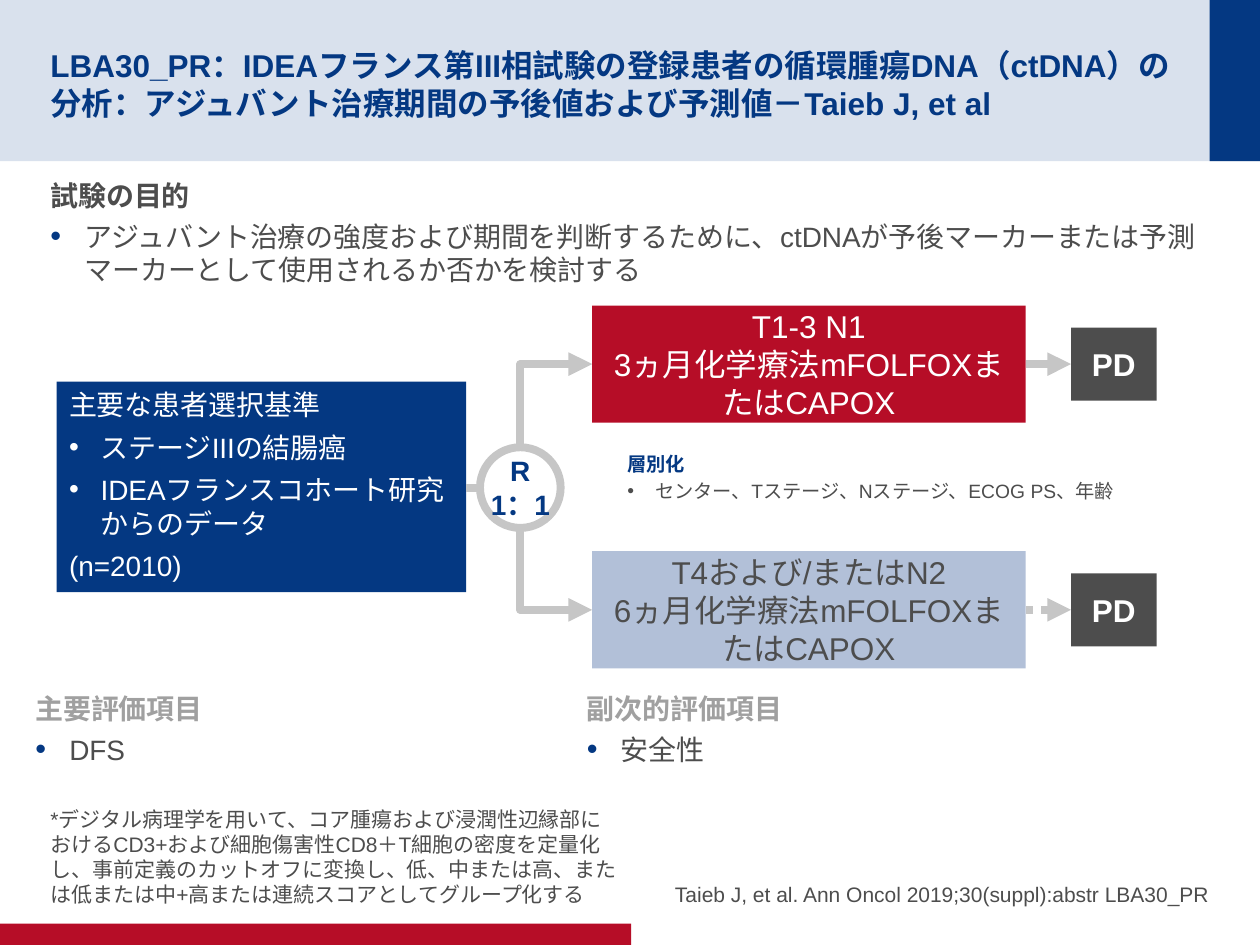
from dataclasses import dataclass

from lxml.etree import SubElement
from pptx import Presentation
from pptx.dml.color import RGBColor
from pptx.enum.dml import MSO_LINE_DASH_STYLE as Dash
from pptx.enum.shapes import MSO_CONNECTOR_TYPE as Link, MSO_SHAPE as Form
from pptx.enum.text import MSO_ANCHOR as Anchor, PP_ALIGN as Align
from pptx.oxml.ns import qn
from pptx.util import Inches, Pt

NAVY, RED, PALE, HEADER = "043882", "B60D27", "B2C0D8", "D9E1ED"
DARK, MID, LIGHT, WHITE = "4D4D4D", "A0A0A0", "C6C6C6", "FFFFFF"
FLAT = (0, 0.05, 0, 0.05)
BARE = (0, 0, 0, 0)
SIDES = (0.1, 0, 0.1, 0)
PADDED = (0.1, 0.05, 0.1, 0.05)


@dataclass(frozen=True)
class Area:
    left: float
    top: float
    width: float
    height: float

    def lengths(self) -> list:
        return [Inches(v) for v in (self.left, self.top, self.width, self.height)]


@dataclass(frozen=True)
class Line:
    text: str
    size: float = 16
    color: str = DARK
    bold: bool = False
    align: Align = Align.LEFT
    after: float = 0
    indent: float = 0
    bullet_color: str = NAVY
    bullet_size: int = 110


@dataclass(frozen=True)
class Arm:
    middle: float
    fill: str
    color: str
    text: str
    dash: Dash | None = None


def rgb(value: str) -> RGBColor:
    return RGBColor.from_string(value)


def add_bullet(para, line: Line) -> None:
    properties = para._p.get_or_add_pPr()
    properties.set("marL", str(Inches(line.indent)))
    properties.set("indent", str(-Inches(line.indent)))
    color = SubElement(properties, qn("a:buClr"))
    SubElement(color, qn("a:srgbClr"), val=line.bullet_color)
    SubElement(properties, qn("a:buSzPct"), val=str(line.bullet_size * 1000))
    SubElement(properties, qn("a:buFont"), typeface="Arial")
    SubElement(properties, qn("a:buChar"), char="•")


def write(box, lines: list[Line], insets=PADDED, anchor=Anchor.TOP, wrap=True) -> None:
    frame = box.text_frame
    frame.word_wrap = wrap
    frame.vertical_anchor = anchor
    (frame.margin_left, frame.margin_top,
     frame.margin_right, frame.margin_bottom) = [Inches(v) for v in insets]
    frame.text = "\n".join(line.text for line in lines)
    for para, line in zip(frame.paragraphs, lines):
        para.alignment = line.align
        para.space_after = Pt(line.after)
        if line.indent:
            add_bullet(para, line)
        for span in para.runs:
            span.font.name = "Arial"
            span.font.size = Pt(line.size)
            span.font.bold = line.bold
            span.font.color.rgb = rgb(line.color)


def add_text(page, area: Area, lines: list[Line], insets=PADDED, anchor=Anchor.TOP) -> None:
    write(page.shapes.add_textbox(*area.lengths()), lines, insets, anchor)


def add_block(page, area: Area, fill: str, form=Form.RECTANGLE):
    block = page.shapes.add_shape(form, *area.lengths())
    block.shadow.inherit = False
    block.fill.solid()
    block.fill.fore_color.rgb = rgb(fill)
    block.line.fill.background()
    return block


def add_link(page, start: tuple, end: tuple, kind=Link.STRAIGHT, arrow=True, dash=None):
    link = page.shapes.add_connector(kind, *[Inches(v) for v in (*start, *end)])
    link.line.color.rgb = rgb(LIGHT)
    link.line.width = Pt(4.5)
    if dash:
        link.line.dash_style = dash
    if arrow:
        SubElement(link.line._get_or_add_ln(), qn("a:tailEnd"), type="triangle")
    SubElement(link._element.spPr, qn("a:effectLst"))
    return link


def add_elbow(page, start: tuple, end: tuple) -> None:
    link = add_link(page, start, end, Link.ELBOW)
    across, down = end[0] - start[0], end[1] - start[1]
    width, height = abs(down), across
    area = Area((start[0] + end[0] - width) / 2, (start[1] + end[1] - height) / 2, width, height)
    link.left, link.top, link.width, link.height = area.lengths()
    properties = link._element.spPr
    properties.find(qn("a:prstGeom")).set("prst", "bentConnector2")
    frame = properties.find(qn("a:xfrm"))
    frame.set("rot", str((270 if down > 0 else 90) * 60000))
    frame.set("flipH", "1")
    frame.set("flipV", "0" if down > 0 else "1")


def add_arm(page, arm: Arm, hub: tuple) -> None:
    add_elbow(page, hub, (4.7, arm.middle))
    add_link(page, (8.14, arm.middle), (8.5, arm.middle), dash=arm.dash)
    treatment = add_block(page, Area(4.7, arm.middle - 0.465, 3.44, 0.93), arm.fill)
    write(treatment, [Line(arm.text, 18, arm.color, align=Align.CENTER)], SIDES, Anchor.MIDDLE)
    outcome = add_block(page, Area(8.5, arm.middle - 0.29, 0.68, 0.58), DARK)
    write(outcome, [Line("PD", 18, WHITE, True, Align.CENTER)], SIDES, Anchor.MIDDLE)


def add_section(page, area: Area, heading: str, item: str, color: str, insets=PADDED) -> None:
    add_text(page, area, [Line(heading, color=color, bold=True, after=4),
                          Line(item, after=4, indent=0.27)], insets)


def main() -> None:
    deck = Presentation()
    deck.slide_width, deck.slide_height = Inches(10), Inches(7.5)
    page = deck.slides.add_slide(deck.slide_layouts[6])

    add_block(page, Area(0, 0, 10, 1.28), HEADER)
    add_block(page, Area(9.6, 0, 0.4, 1.28), NAVY)
    add_block(page, Area(0, 7.33, 5.01, 0.17), RED)

    title = "LBA30_PR：IDEAフランス第III相試験の登録患者の循環腫瘍DNA（ctDNA）の分析：アジュバント治療期間の予後値および予測値－Taieb J, et al"
    add_text(page, Area(0.4, 0.2, 9.13, 0.88), [Line(title, 18, NAVY, True)],
             (0, 0.05, 0, 0), Anchor.MIDDLE)
    add_section(page, Area(0.4, 1.37, 9.2, 0.95), "試験の目的",
                "アジュバント治療の強度および期間を判断するために、ctDNAが予後マーカーまたは予測マーカーとして使用されるか否かを検討する",
                DARK, FLAT)
    add_section(page, Area(0.28, 5.44, 4.52, 0.85), "主要評価項目", "DFS", MID, FLAT)
    add_section(page, Area(4.56, 5.44, 4.92, 0.91), "副次的評価項目", "安全性", MID)

    footnote = "*デジタル病理学を用いて、コア腫瘍および浸潤性辺縁部におけるCD3+および細胞傷害性CD8＋T細胞の密度を定量化し、事前定義のカットオフに変換し、低、中または高、または低または中+高または連続スコアとしてグループ化する"
    citation = "Taieb J, et al. Ann Oncol 2019;30(suppl):abstr LBA30_PR"
    for left, text, align in ((0.4, footnote, Align.LEFT), (5.08, citation, Align.RIGHT)):
        add_text(page, Area(left, 6.67, 4.52, 0.53), [Line(text, 12, align=align, after=4)],
                 BARE, Anchor.BOTTOM)

    criteria = add_block(page, Area(0.45, 3.03, 3.25, 1.67), NAVY, Form.ROUNDED_RECTANGLE)
    criteria.adjustments[0] = 0
    bullet = dict(indent=0.25, bullet_color=WHITE, bullet_size=100)
    write(criteria, [
        Line("主要な患者選択基準", color=WHITE, after=5),
        Line("ステージIIIの結腸癌", color=WHITE, after=5, **bullet),
        Line("IDEAフランスコホート研究からのデータ", color=WHITE, after=5, **bullet),
        Line("(n=2010)", color=WHITE, after=5),
    ])

    add_link(page, (3.7, 3.87), (3.81, 3.87), arrow=False)
    randomised = add_block(page, Area(3.81, 3.55, 0.64, 0.64), WHITE, Form.OVAL)
    randomised.fill.background()
    randomised.line.color.rgb = rgb(LIGHT)
    randomised.line.width = Pt(4.5)
    write(randomised, [Line(text, 16, NAVY, True, Align.CENTER) for text in ("R", "1：1")],
          anchor=Anchor.MIDDLE, wrap=False)

    add_arm(page, Arm(2.89, RED, WHITE, "T1-3 N1\v3ヵ月化学療法mFOLFOXまたはCAPOX"), (4.13, 3.55))
    add_arm(page, Arm(4.84, PALE, DARK, "T4および/またはN2\v6ヵ月化学療法mFOLFOXまたはCAPOX",
                      Dash.ROUND_DOT), (4.13, 4.19))

    add_text(page, Area(4.88, 3.54, 4.11, 0.98), [
        Line("層別化", 11, NAVY, True, after=2),
        Line("センター、Tステージ、Nステージ、ECOG PS、年齢", 11, after=2, indent=0.22,
             bullet_color=DARK, bullet_size=100),
    ])
    deck.save("out.pptx")


if __name__ == "__main__":
    main()
